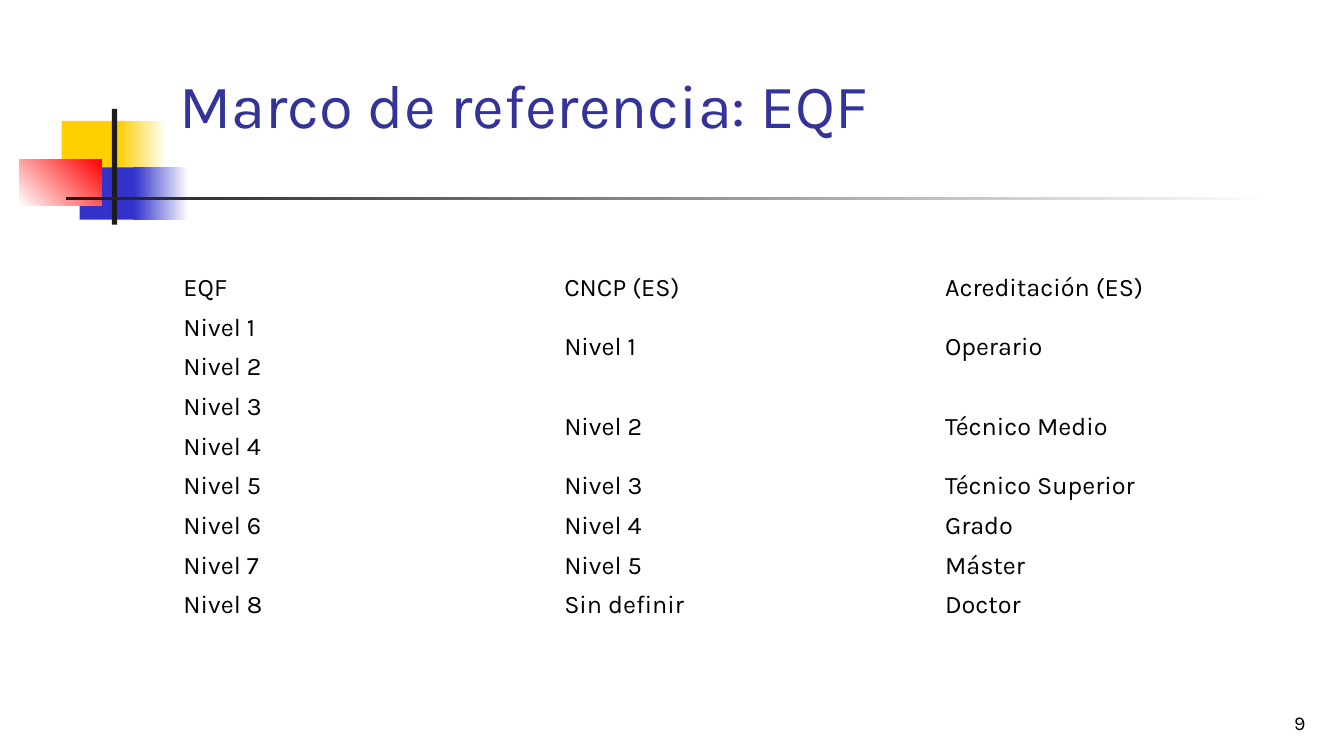
from pptx import Presentation
from pptx.dml.color import RGBColor
from pptx.enum.shapes import MSO_SHAPE
from pptx.enum.text import MSO_ANCHOR, MSO_AUTO_SIZE, PP_ALIGN
from pptx.util import Inches, Pt

YELLOW = RGBColor(0xFF, 0xCF, 0x01)
BLUE = RGBColor(0x33, 0x33, 0xCC)
RED = RGBColor(0xFF, 0x00, 0x00)
INK = RGBColor(0x1C, 0x1C, 0x1C)
NAVY = RGBColor(0x33, 0x33, 0x99)
BLACK = RGBColor(0x00, 0x00, 0x00)
WHITE = RGBColor(0xFF, 0xFF, 0xFF)

# None continues the cell above
LEVELS = [
    ("EQF", "CNCP (ES)", "Acreditación (ES)"),
    ("Nivel 1", "Nivel 1", "Operario"),
    ("Nivel 2", None, None),
    ("Nivel 3", "Nivel 2", "Técnico Medio"),
    ("Nivel 4", None, None),
    ("Nivel 5", "Nivel 3", "Técnico Superior"),
    ("Nivel 6", "Nivel 4", "Grado"),
    ("Nivel 7", "Nivel 5", "Máster"),
    ("Nivel 8", "Sin definir", "Doctor"),
]


def write(tf, text, size=18, color=BLACK, align=PP_ALIGN.LEFT, anchor=MSO_ANCHOR.MIDDLE):
    tf.word_wrap = True
    tf.vertical_anchor = anchor
    p = tf.paragraphs[0]
    p.alignment = align
    r = p.add_run()
    r.text = text
    r.font.name = "Karla"
    r.font.size = Pt(size)
    r.font.color.rgb = color


class SlideBuilder:
    """Places elements by percentages of the slide's width and height."""

    def __init__(self, prs):
        self.width, self.height = prs.slide_width, prs.slide_height
        self.slide = prs.slides.add_slide(prs.slide_layouts[5])

    def box(self, left, top, width, height):
        return (round(self.width * left / 100), round(self.height * top / 100),
                round(self.width * width / 100), round(self.height * height / 100))

    def title(self, text, *area, **style):
        sp = self.slide.shapes.title
        sp.left, sp.top, sp.width, sp.height = self.box(*area)
        sp.text_frame.auto_size = MSO_AUTO_SIZE.NONE
        write(sp.text_frame, text, **style)

    def text(self, text, *area, **style):
        sp = self.slide.shapes.add_textbox(*self.box(*area))
        write(sp.text_frame, text, **style)

    def block(self, color, *area, end=None, angle=0):
        sp = self.slide.shapes.add_shape(MSO_SHAPE.RECTANGLE, *self.box(*area))
        sp.shadow.inherit = False
        sp.line.fill.background()
        if end is None:
            sp.fill.solid()
            sp.fill.fore_color.rgb = color
            return
        sp.fill.gradient()
        sp.fill.gradient_angle = angle
        for stop, rgb, position in zip(sp.fill.gradient_stops, (color, end), (0, 1)):
            stop.color.rgb = rgb
            stop.position = position

    def table(self, rows, *area):
        frame = self.slide.shapes.add_table(len(rows), len(rows[0]), *self.box(*area))
        table = frame.table
        table.first_row = table.horz_banding = False
        for i, row in enumerate(rows):
            for j, text in enumerate(row):
                cell = table.cell(i, j)
                cell.fill.background()
                if text is None:
                    table.cell(i - 1, j).merge(cell)
                else:
                    write(cell.text_frame, text)
                    cell.vertical_anchor = MSO_ANCHOR.MIDDLE


def main():
    prs = Presentation()
    prs.slide_width, prs.slide_height = Inches(13.33), Inches(7.5)
    s = SlideBuilder(prs)

    # Coloured blocks with fading edges
    s.block(YELLOW, 4.58, 16, 4.8, 6.93)
    s.block(YELLOW, 8.78, 16, 3.6, 6.93, end=WHITE)
    s.block(BLUE, 5.93, 22.13, 4.65, 6.93)
    s.block(BLUE, 9.98, 22.13, 4.05, 6.93, end=WHITE)
    s.block(WHITE, 1.43, 21.07, 6.15, 6.13, end=RED, angle=45)

    # Crossing bars
    s.block(INK, 8.33, 14.4, 0.38, 15.33)
    s.block(INK, 4.88, 26, 90, 0.45, end=WHITE)

    # Title, table and page number
    s.title("Marco de referencia: EQF", 12.6, 3.07, 85.2, 21.33, size=44, color=NAVY)
    s.table(LEVELS, 12.9, 35.47, 85, 47.2)
    s.text("9", 77.03, 91.07, 20.85, 6.67, size=14,
           align=PP_ALIGN.RIGHT, anchor=MSO_ANCHOR.BOTTOM)

    prs.save("out.pptx")


if __name__ == "__main__":
    main()
